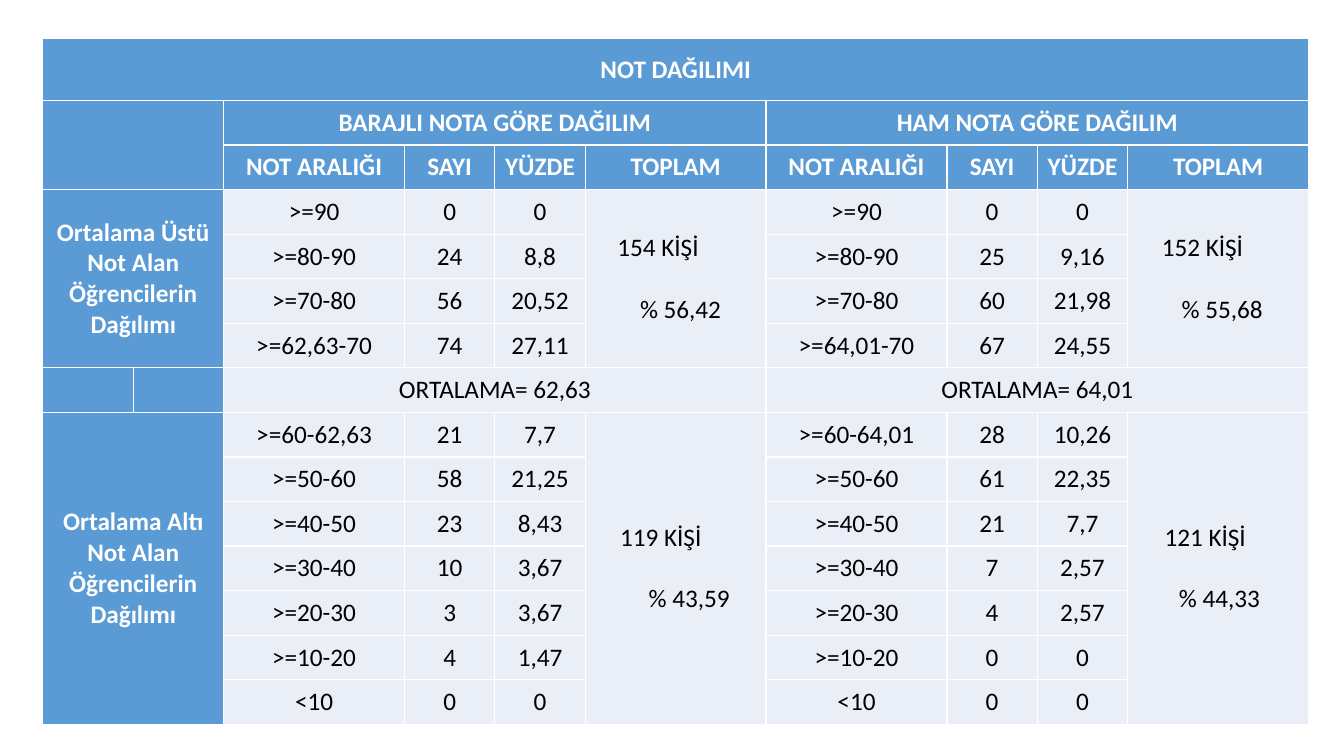
"""Build the grade distribution slide."""
import dataclasses

import lxml.etree
import pptx
import pptx.dml.color
import pptx.enum.text
import pptx.oxml.ns
import pptx.util

Cm, Pt = pptx.util.Cm, pptx.util.Pt

TITLE = "NOT DAĞILIMI"
COLUMN_HEADS = ["NOT ARALIĞI", "SAYI", "YÜZDE", "TOPLAM"]
GROUP_LABELS = ["Ortalama Üstü Not Alan Öğrencilerin Dağılımı",
                "Ortalama Altı Not Alan Öğrencilerin Dağılımı"]
DISTRIBUTIONS = [
    {
        "head": "BARAJLI NOTA GÖRE DAĞILIM",
        "average": "ORTALAMA= 62,63",
        "groups": [
            [(">=90", "0", "0"), (">=80-90", "24", "8,8"),
             (">=70-80", "56", "20,52"), (">=62,63-70", "74", "27,11")],
            [(">=60-62,63", "21", "7,7"), (">=50-60", "58", "21,25"),
             (">=40-50", "23", "8,43"), (">=30-40", "10", "3,67"),
             (">=20-30", "3", "3,67"), (">=10-20", "4", "1,47"),
             ("<10", "0", "0")],
        ],
        "totals": [[("154 KİŞİ", 0.81), ("% 56,42", 1.38)],
                   [("119 KİŞİ", 0.88), ("% 43,59", 1.6)]],
    },
    {
        "head": "HAM NOTA GÖRE DAĞILIM",
        "average": "ORTALAMA= 64,01",
        "groups": [
            [(">=90", "0", "0"), (">=80-90", "25", "9,16"),
             (">=70-80", "60", "21,98"), (">=64,01-70", "67", "24,55")],
            [(">=60-64,01", "28", "10,26"), (">=50-60", "61", "22,35"),
             (">=40-50", "21", "7,7"), (">=30-40", "7", "2,57"),
             (">=20-30", "4", "2,57"), (">=10-20", "0", "0"),
             ("<10", "0", "0")],
        ],
        "totals": [[("152 KİŞİ", 0.86), ("% 55,68", 1.36)],
                   [("121 KİŞİ", 0.93), ("% 44,33", 1.29)]],
    },
]
LEFT, TOP, WIDTH, HEIGHT, TITLE_HEIGHT = 1.08, 0.98, 31.9, 17.28, 1.55
COLUMN_UNITS = [1, 1] + [2, 1, 1, 2] * 2
ROW_COUNT = 15
GROUP_ROWS = [3, 8]
AVERAGE_ROW = 7


@dataclasses.dataclass(frozen=True)
class Theme:
    """Colours, font and type sizes."""
    head_fill: str = "5B9BD5"
    body_fill: str = "EAEFF7"
    head_text: str = "FFFFFF"
    body_text: str = "000000"
    border: str = "FFFFFF"
    font: str = "Calibri"
    size: int = 18
    total_gap: int = 22


THEME = Theme()


def rgb(value):
    """Turn a hex value into a colour."""
    return pptx.dml.color.RGBColor.from_string(value)


def add_borders(cell):
    """Draw a thin line on each side of a cell."""
    props = cell._tc.get_or_add_tcPr()
    qn = pptx.oxml.ns.qn
    for i, side in enumerate(("lnL", "lnR", "lnT", "lnB")):
        line = lxml.etree.Element(qn(f"a:{side}"), w=str(Pt(1)))
        fill = lxml.etree.SubElement(line, qn("a:solidFill"))
        lxml.etree.SubElement(fill, qn("a:srgbClr"), val=THEME.border)
        props.insert(i, line)


def format_cell(cell, head):
    """Give a cell its fill, borders and type."""
    cell.margin_left = cell.margin_right = cell.margin_top = cell.margin_bottom = 0
    cell.vertical_anchor = pptx.enum.text.MSO_ANCHOR.MIDDLE
    cell.fill.solid()
    cell.fill.fore_color.rgb = rgb(THEME.head_fill if head else THEME.body_fill)
    add_borders(cell)
    for p in cell.text_frame.paragraphs:
        if p.alignment is None:
            p.alignment = pptx.enum.text.PP_ALIGN.CENTER
        p.font.size = Pt(THEME.size)
        for r in p.runs:
            r.font.name = THEME.font
            r.font.size = Pt(THEME.size)
            r.font.bold = head
            r.font.color.rgb = rgb(THEME.head_text if head else THEME.body_text)


def put(table, row, col, text, rows=1, cols=1):
    """Write text into a cell that may span several rows and columns."""
    cell = table.cell(row, col)
    if rows * cols > 1:
        cell.merge(table.cell(row + rows - 1, col + cols - 1))
    cell.text_frame.text = text
    return cell


def put_total(table, row, col, lines, rows):
    """Write a head count and its share on two indented lines."""
    tf = put(table, row, col, "\n".join(text for text, _ in lines), rows).text_frame
    for p, (_, indent) in zip(tf.paragraphs, lines):
        p.alignment = pptx.enum.text.PP_ALIGN.LEFT
        p._p.get_or_add_pPr().set("marL", str(Cm(indent)))
    tf.paragraphs[1].space_before = Pt(THEME.total_gap)


def fill_distribution(table, col, data):
    """Write one distribution into its four columns."""
    put(table, 1, col, data["head"], cols=4)
    for i, head in enumerate(COLUMN_HEADS):
        put(table, 2, col + i, head)
    put(table, AVERAGE_ROW, col, data["average"], cols=4)
    for start, group, total in zip(GROUP_ROWS, data["groups"], data["totals"]):
        for i, values in enumerate(group):
            for j, value in enumerate(values):
                put(table, start + i, col + j, value)
        put_total(table, start, col + 3, total, len(group))


def main():
    """Create and save the slide."""
    prs = pptx.Presentation()
    prs.slide_width, prs.slide_height = Cm(33.87), Cm(19.05)
    s = prs.slides.add_slide(prs.slide_layouts[6])
    table = s.shapes.add_table(ROW_COUNT, len(COLUMN_UNITS), Cm(LEFT), Cm(TOP),
                               Cm(WIDTH), Cm(HEIGHT)).table
    table.first_row = table.horz_banding = False
    for column, units in zip(table.columns, COLUMN_UNITS):
        column.width = Cm(WIDTH * units / sum(COLUMN_UNITS))
    for i, row in enumerate(table.rows):
        row.height = Cm((HEIGHT - TITLE_HEIGHT) / (ROW_COUNT - 1) if i else TITLE_HEIGHT)

    put(table, 0, 0, TITLE, cols=len(COLUMN_UNITS))
    put(table, 1, 0, "", rows=2, cols=2)
    for start, label, group in zip(GROUP_ROWS, GROUP_LABELS, DISTRIBUTIONS[0]["groups"]):
        put(table, start, 0, label, rows=len(group), cols=2)
    for i, data in enumerate(DISTRIBUTIONS):
        fill_distribution(table, 2 + 4 * i, data)
    for i in range(ROW_COUNT):
        for j in range(len(COLUMN_UNITS)):
            format_cell(table.cell(i, j), head=i < GROUP_ROWS[0] or j < 2)
    prs.save("out.pptx")


if __name__ == "__main__":
    main()
